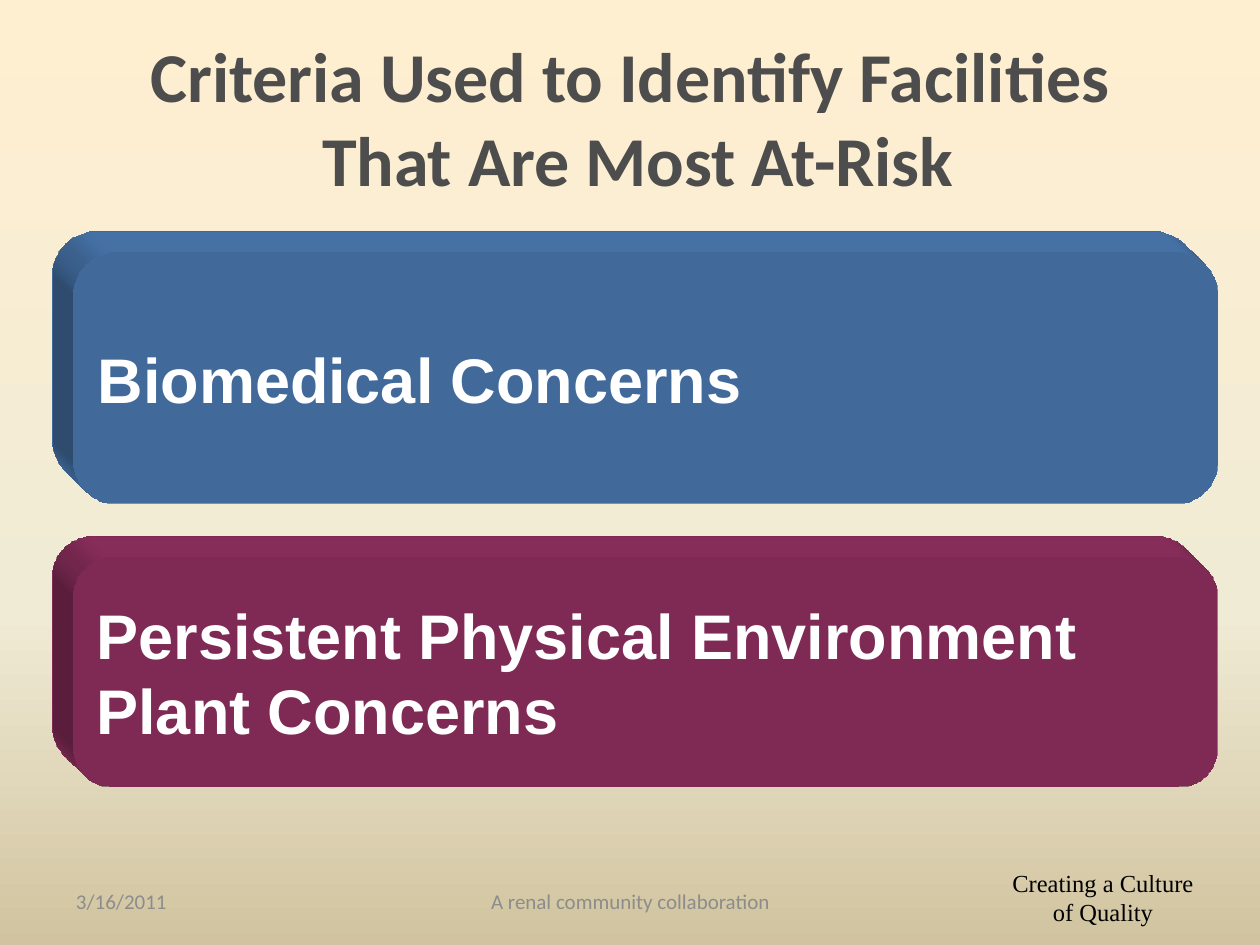
import copy
from dataclasses import dataclass

from lxml import etree
from pptx import Presentation
from pptx import util as u
from pptx.dml.color import RGBColor
from pptx.enum import shapes, text
from pptx.oxml.ns import qn

PX = 914400 / 126  # EMU per px
CORNER = 0.167
EXTRUSION = 59  # depth of the banners in px
COLORS = {
    "title": "4D4D4D", "footer": "8C8C8C", "ink": "000000", "white": "FFFFFF",
    "blue": "4F81BD", "plum": "993366",
}
BACKGROUND = [(0, "FFEFD1"), (0.65, "F0EBD5"), (1, "D1C39F")]


@dataclass
class Label:
    lines: list[str]
    box: tuple[int, int, int, int]
    size: int
    color: str
    font: str = "Calibri"
    align: text.PP_ALIGN = text.PP_ALIGN.CENTER
    anchor: text.MSO_ANCHOR = text.MSO_ANCHOR.MIDDLE
    bold: bool = False
    inset: tuple[int, int] = (13, 6)


@dataclass
class Banner:
    lines: list[str]
    top: int
    height: int
    color: str
    left: int = 73
    width: int = 1145


def emu(px: float) -> u.Emu:
    return u.Emu(round(px * PX))


def rgb(key: str) -> RGBColor:
    return RGBColor.from_string(COLORS[key])


def add_run(paragraph, words: str, size: int, color: str, font: str, bold: bool) -> None:
    run = paragraph.add_run()
    run.text = words
    run.font.size, run.font.name, run.font.bold = u.Pt(size), font, bold
    run.font.color.rgb = rgb(color)


def draw_label(slide, label: Label) -> None:
    frame = slide.shapes.add_textbox(*map(emu, label.box)).text_frame
    frame.word_wrap = True
    frame.vertical_anchor = label.anchor
    frame.margin_left = frame.margin_right = emu(label.inset[0])
    frame.margin_top = frame.margin_bottom = emu(label.inset[1])
    paragraph = frame.paragraphs[0]
    paragraph.alignment = label.align
    for i, line in enumerate(label.lines):
        if i:
            paragraph.add_line_break()
        add_run(paragraph, line, label.size, label.color, label.font, label.bold)


def extrude(shape, color: str) -> None:
    """Give the shape a solid body running up and to the left."""
    properties = shape.element.spPr
    scene = etree.SubElement(properties, qn("a:scene3d"))
    etree.SubElement(scene, qn("a:camera"), prst="legacyObliqueTopLeft")
    etree.SubElement(scene, qn("a:lightRig"), rig="legacyFlat3", dir="l")
    body = etree.SubElement(properties, qn("a:sp3d"),
                            extrusionH=str(emu(EXTRUSION)), prstMaterial="legacyMatte")
    for bevel in ("a:bevelT", "a:bevelB"):
        etree.SubElement(body, qn(bevel), w="13500", h="13500", prst="angle")
    tint = etree.SubElement(body, qn("a:extrusionClr"))
    etree.SubElement(tint, qn("a:srgbClr"), val=COLORS[color])


def draw_banner(slide, banner: Banner) -> None:
    face = slide.shapes.add_shape(
        shapes.MSO_SHAPE.ROUNDED_RECTANGLE,
        *map(emu, (banner.left, banner.top, banner.width, banner.height)))
    face.adjustments[0] = CORNER
    face.shadow.inherit = False
    face.fill.solid()
    face.fill.fore_color.rgb = rgb(banner.color)
    face.line.fill.background()
    extrude(face, banner.color)

    frame = face.text_frame
    frame.word_wrap = True
    frame.vertical_anchor = text.MSO_ANCHOR.MIDDLE
    for i, line in enumerate(banner.lines):
        paragraph = frame.add_paragraph() if i else frame.paragraphs[0]
        paragraph.alignment = text.PP_ALIGN.LEFT
        add_run(paragraph, line, 36, "white", "Arial", True)


def draw_background(slide) -> None:
    fill = slide.background.fill
    fill.gradient()
    fill.gradient_angle = 270
    stop_list = next(slide.element.iter(qn("a:gsLst")))
    stop_list.append(copy.deepcopy(stop_list[-1]))
    for stop, (position, color) in zip(fill.gradient_stops, BACKGROUND):
        stop.position = position
        stop.color.rgb = RGBColor.from_string(color)


TAGLINE = Label(["Creating a Culture of Quality"], (998, 863, 210, 63), 14, "ink",
                font="Times New Roman", anchor=text.MSO_ANCHOR.TOP, inset=(5, 5))
TITLE = Label(["Criteria Used to Identify Facilities", " That Are Most At-Risk"],
              (63, 37, 1134, 158), 40, "title", bold=True)
BANNERS = [
    Banner(["Persistent Physical Environment", "Plant Concerns"], 557, 230, "plum"),
    Banner(["Biomedical Concerns"], 252, 252, "blue"),
]
FOOTERS = [
    Label(["3/16/2011"], (63, 876, 294, 50), 12, "footer", align=text.PP_ALIGN.LEFT),
    Label(["A renal community collaboration"], (431, 876, 399, 50), 12, "footer"),
]


def main() -> None:
    deck = Presentation()
    deck.slide_width, deck.slide_height = emu(1260), emu(945)
    slide = deck.slides.add_slide(deck.slide_layouts[6])
    draw_background(slide)

    # Tagline and title
    for label in (TAGLINE, TITLE):
        draw_label(slide, label)

    # Criteria
    for banner in BANNERS:
        draw_banner(slide, banner)

    # Date and footer
    for label in FOOTERS:
        draw_label(slide, label)
    deck.save("out.pptx")


if __name__ == "__main__":
    main()
